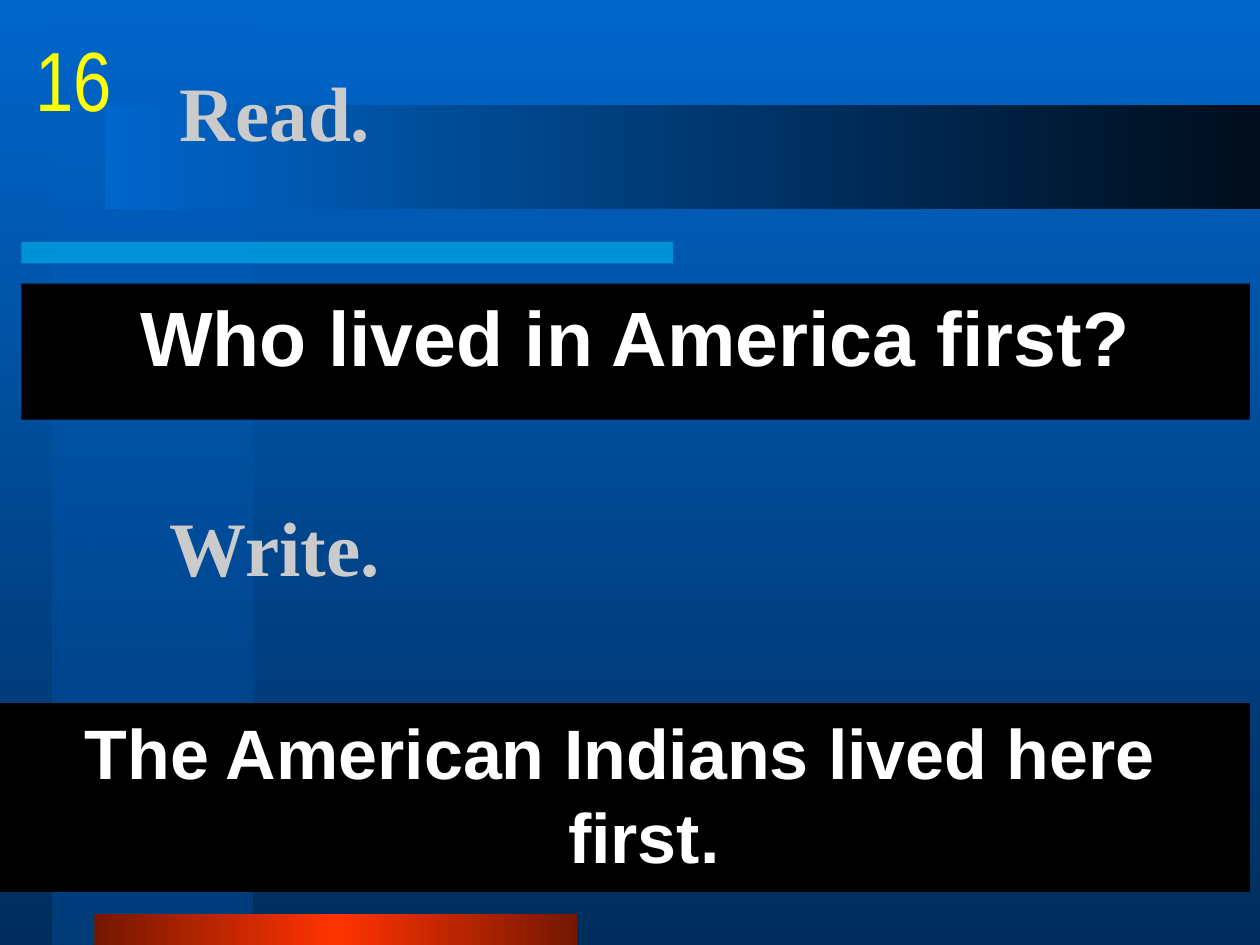
from lxml.etree import SubElement as Sub
from pptx import Presentation
from pptx.dml.color import RGBColor as RGB
from pptx.enum.shapes import MSO_SHAPE as Kind
from pptx.enum.text import MSO_ANCHOR as Anchor, PP_ALIGN as Align
from pptx.oxml.ns import qn
from pptx.util import Inches, Pt

BLUE = RGB(0x00, 0x66, 0xCC)
NAVY = RGB(0x00, 0x2E, 0x5C)
STEEL = RGB(0x00, 0x3D, 0x7A)
NIGHT = RGB(0x00, 0x0D, 0x1A)
CYAN = RGB(0x00, 0xCC, 0xFF)
RED = RGB(0xFF, 0x33, 0x00)
RUST = RGB(0x75, 0x17, 0x00)
BLACK = RGB(0x00, 0x00, 0x00)
WHITE = RGB(0xFF, 0xFF, 0xFF)
GREY = RGB(0xCB, 0xCB, 0xCB)
YELLOW = RGB(0xFF, 0xFF, 0x00)
DOWN, RIGHT = 270, 0


def fade(color):
    """Make an srgbClr element half transparent."""
    Sub(color, qn("a:alpha"), val="50000")


def blend(owner, fill, angle, colors, clear=False):
    """Fill with evenly spaced gradient stops, the first faded if clear."""
    fill.gradient()
    fill.gradient_angle = angle
    stops = next(owner._element.iter(qn("a:gsLst")))
    for stop in list(stops):
        stops.remove(stop)
    for i, color in enumerate(colors):
        spot = round(100000 * i / (len(colors) - 1))
        stop = Sub(stops, qn("a:gs"), pos=str(spot))
        tint = Sub(stop, qn("a:srgbClr"), val=str(color))
        if clear and i == 0:
            fade(tint)


def add_bar(slide, x, y, w, h, color=None):
    bar = slide.shapes.add_shape(
        Kind.RECTANGLE, Inches(x), Inches(y), Inches(w), Inches(h))
    bar.shadow.inherit = False
    bar.line.fill.background()
    if color is not None:
        bar.fill.solid()
        bar.fill.fore_color.rgb = color
    return bar


def write(shape, text, font, size, color, bold=True, align=Align.LEFT,
          anchor=Anchor.MIDDLE, wrap=True):
    frame = shape.text_frame
    frame.word_wrap = wrap
    frame.vertical_anchor = anchor
    para = frame.paragraphs[0]
    para.text = text
    para.alignment = align
    para.font.name = font
    para.font.size = Pt(size)
    para.font.bold = bold
    para.font.color.rgb = color
    return para


def add_label(slide, x, y, w, h, *args, **style):
    box = slide.shapes.add_textbox(
        Inches(x), Inches(y), Inches(w), Inches(h))
    write(box, *args, **style)


def add_panel(slide, x, y, w, h, text, size):
    """Black panel with a centred sentence on a hanging indent."""
    panel = add_bar(slide, x, y, w, h, BLACK)
    para = write(panel, text, "Arial", size, WHITE,
                 align=Align.CENTER, anchor=Anchor.TOP)
    para.space_before = Pt(5)
    props = para._p.get_or_add_pPr()
    props.set("marL", str(Inches(0.38)))
    props.set("indent", str(Inches(-0.38)))


def add_decor(slide):
    blend(slide, slide.background.fill, DOWN, [BLUE, NAVY])
    side = add_bar(slide, 0.42, 0, 1.58, 7.5)
    blend(side, side.fill, DOWN, [BLUE, STEEL], clear=True)
    rule = add_bar(slide, 0.17, 1.92, 5.17, 0.17, CYAN)
    fade(next(rule._element.spPr.iter(qn("a:srgbClr"))))
    foot = add_bar(slide, 0.75, 7.25, 3.83, 0.25)
    blend(foot, foot.fill, RIGHT, [RUST, RED, RUST])
    band = add_bar(slide, 0.83, 0.83, 9.17, 0.83)
    blend(band, band.fill, RIGHT, [BLUE, NIGHT])


def main():
    deck = Presentation()
    deck.slide_width, deck.slide_height = Inches(10), Inches(7.5)
    slide = deck.slides.add_slide(deck.slide_layouts[6])
    add_decor(slide)
    add_label(slide, 1.33, 0.25, 8.5, 1.25,
              "Read.", "Times New Roman", 44, GREY)
    add_panel(slide, 0.17, 2.25, 9.75, 1.08,
              "Who lived in America first?", 44)
    add_label(slide, 1.25, 3.5, 8.5, 1.67,
              "Write.", "Times New Roman", 44, GREY)
    add_panel(slide, -0.08, 5.58, 10, 1.5,
              "The American Indians lived here first.", 40)
    add_label(slide, 0.17, 0.17, 0.83, 0.83, "16", "Arial Narrow", 48,
              YELLOW, bold=False, align=Align.CENTER, anchor=Anchor.TOP,
              wrap=False)
    deck.save("out.pptx")


if __name__ == "__main__":
    main()
